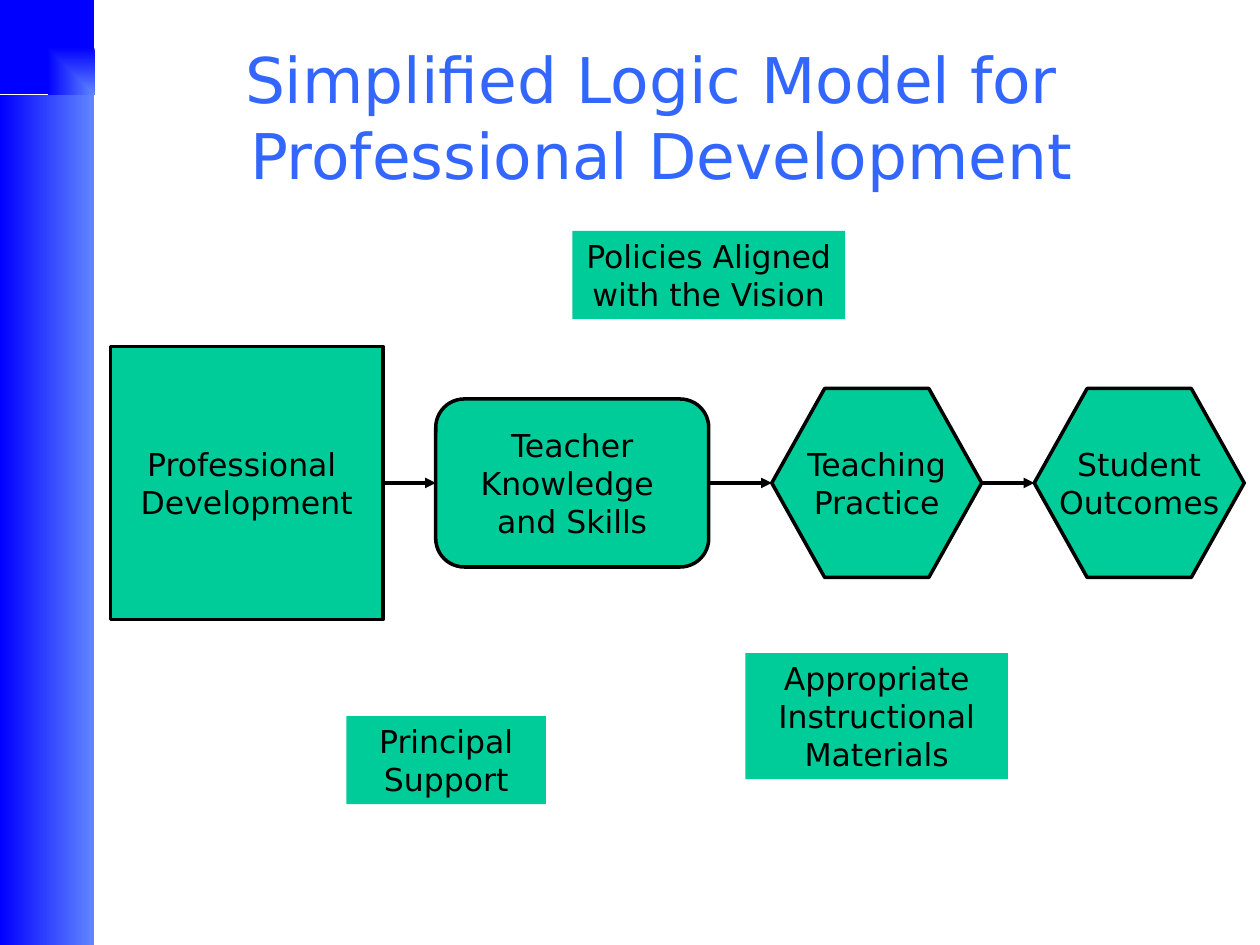
from dataclasses import dataclass

from lxml import etree
from pptx import Presentation
from pptx import util as u
from pptx.dml.color import RGBColor
from pptx.enum import shapes, text
from pptx.oxml.ns import qn

EMU_PER_PX = 7620  # 120 px to the inch
SHAPE = shapes.MSO_SHAPE


@dataclass(frozen=True)
class Theme:
    font: str = "DejaVu Sans"
    title_size: int = 36
    body_size: int = 18
    line_width: int = 2
    title: str = "3366FF"
    ink: str = "000000"
    box: str = "00CC99"
    band_dark: str = "0000FF"
    band_light: str = "6187FF"


def px(*lengths):
    return [u.Emu(length * EMU_PER_PX) for length in lengths]


def rgb(value):
    return RGBColor.from_string(value)


def write(frame, paragraphs, *, font, size, color, wrap=True,
          anchor=text.MSO_ANCHOR.MIDDLE, autosize=text.MSO_AUTO_SIZE.NONE):
    """Fill a text frame with centred paragraphs in one format."""
    frame.word_wrap = wrap
    frame.vertical_anchor = anchor
    frame.auto_size = autosize
    for index, words in enumerate(paragraphs):
        paragraph = frame.add_paragraph() if index else frame.paragraphs[0]
        paragraph.text = words
        paragraph.alignment = text.PP_ALIGN.CENTER
        for run in paragraph.runs:
            run.font.name = font
            run.font.size = u.Pt(size)
            run.font.color.rgb = rgb(color)


class SlideBuilder:
    def __init__(self, slide, theme):
        self.slide = slide
        self.theme = theme

    def write_body(self, shape, paragraphs, **options):
        write(shape.text_frame, paragraphs, font=self.theme.font,
              size=self.theme.body_size, color=self.theme.ink, **options)

    def title(self, words, left, top, width, height):
        shape = self.slide.shapes.title
        shape.left, shape.top, shape.width, shape.height = px(left, top, width, height)
        write(shape.text_frame, [words], font=self.theme.font,
              size=self.theme.title_size, color=self.theme.title)

    def plain_shape(self, kind, left, top, width, height):
        shape = self.slide.shapes.add_shape(kind, *px(left, top, width, height))
        shape.shadow.inherit = False
        shape.line.fill.background()
        return shape

    def gradient_band(self, left, top, width, height, colors, to_corner=False):
        shape = self.plain_shape(SHAPE.RECTANGLE, left, top, width, height)
        shape.fill.gradient()
        shape.fill.gradient_angle = 0
        for stop, color in zip(shape.fill.gradient_stops, colors):
            stop.color.rgb = rgb(color)
        if to_corner:
            gradient = shape._element.spPr.find(qn("a:gradFill"))
            gradient.remove(gradient.find(qn("a:lin")))
            corner = etree.SubElement(gradient, qn("a:path"), path="rect")
            etree.SubElement(corner, qn("a:fillToRect"), l="100000", t="100000")

    def box(self, kind, left, top, width, height):
        shape = self.plain_shape(kind, left, top, width, height)
        shape.fill.solid()
        shape.fill.fore_color.rgb = rgb(self.theme.box)
        return shape

    def stage(self, kind, left, top, width, height, lines, adjustment=None):
        shape = self.box(kind, left, top, width, height)
        shape.line.color.rgb = rgb(self.theme.ink)
        shape.line.width = u.Pt(self.theme.line_width)
        if adjustment is not None:
            shape.adjustments[0] = adjustment
        self.write_body(shape, lines, wrap=False)

    def support(self, left, top, width, height, words):
        shape = self.box(SHAPE.RECTANGLE, left, top, width, height)
        self.write_body(shape, [words], anchor=text.MSO_ANCHOR.TOP,
                        autosize=text.MSO_AUTO_SIZE.SHAPE_TO_FIT_TEXT)

    def arrow(self, start, end, y):
        connector = self.slide.shapes.add_connector(
            shapes.MSO_CONNECTOR.STRAIGHT, *px(start, y, end, y))
        connector.line.color.rgb = rgb(self.theme.ink)
        connector.line.width = u.Pt(self.theme.line_width)
        etree.SubElement(connector.line._get_or_add_ln(), qn("a:tailEnd"), type="triangle")
        etree.SubElement(connector._element.spPr, qn("a:effectLst"))


def main():
    presentation = Presentation()
    presentation.slide_width, presentation.slide_height = px(1200, 900)
    theme = Theme()
    slide = presentation.slides.add_slide(presentation.slide_layouts[5])
    builder = SlideBuilder(slide, theme)

    # Side band
    builder.gradient_band(0, 0, 90, 90, (theme.band_light, theme.band_dark), to_corner=True)
    builder.gradient_band(0, 90, 90, 810, (theme.band_dark, theme.band_light))

    # Title, with a line break inside one paragraph
    builder.title("Simplified Logic Model for \vProfessional Development", 60, 36, 1140, 150)

    # Chain of stages, centred on one axis
    axis = 460
    stages = [
        (SHAPE.RECTANGLE, 105, 260, 260, ["Professional ", "Development"], None),
        (SHAPE.ROUNDED_RECTANGLE, 415, 260, 160, ["Teacher", "Knowledge ", "and Skills"], 0.17),
        (SHAPE.HEXAGON, 735, 200, 180, ["Teaching", "Practice"], 0.28),
        (SHAPE.HEXAGON, 985, 200, 180, ["Student", "Outcomes"], 0.28),
    ]
    for kind, left, width, height, lines, adjustment in stages:
        builder.stage(kind, left, axis - height // 2, width, height, lines, adjustment)

    # Arrows from each stage to the next
    for (_, left, width, *_), (_, next_left, *_) in zip(stages, stages[1:]):
        builder.arrow(left + width, next_left, axis)

    # Supporting conditions
    builder.support(330, 682, 190, 84, "Principal Support")
    builder.support(710, 622, 250, 120, "Appropriate Instructional Materials")
    builder.support(545, 220, 260, 84, "Policies Aligned with the Vision")

    presentation.save("out.pptx")


if __name__ == "__main__":
    main()
